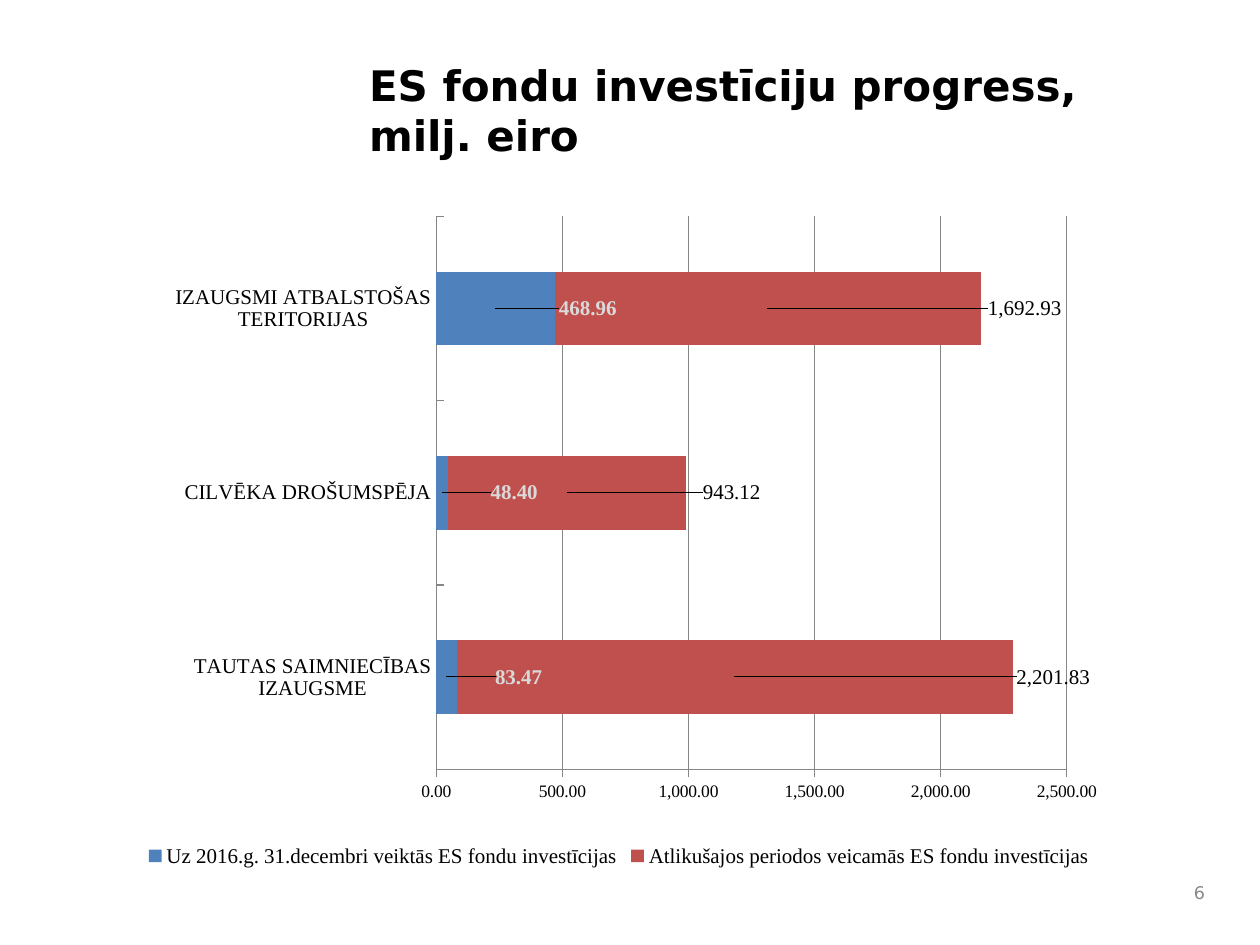
import pptx
import pptx.chart.data
import pptx.dml.color
import pptx.enum.chart
import pptx.enum.text
import pptx.oxml
import pptx.oxml.ns
import pptx.util
from pptx.util import Cm, Pt

RGBColor = pptx.dml.color.RGBColor
BLACK = RGBColor(0x00, 0x00, 0x00)
GREY = RGBColor(0x89, 0x89, 0x89)
AXIS_GREY = RGBColor(0x86, 0x86, 0x86)
LIGHT_GREY = RGBColor(0xD9, 0xD9, 0xD9)
BLUE = RGBColor(0x4F, 0x81, 0xBD)
RED = RGBColor(0xC0, 0x50, 0x4D)

HEADING_FONT = "DejaVu Sans"
CHART_FONT = "Times New Roman"
MILLIONS = "#,##0.00,,"

CATEGORIES = [
    "TAUTAS SAIMNIECĪBAS IZAUGSME",
    "CILVĒKA DROŠUMSPĒJA",
    "IZAUGSMI ATBALSTOŠAS TERITORIJAS",
]
SERIES = [
    {
        "name": "Uz 2016.g. 31.decembri veiktās ES fondu investīcijas",
        "values": [83470000, 48400000, 468960000],
        "fill": BLUE,
        "label_color": LIGHT_GREY,
        "bold": True,
        "label_shifts": [0.07, 0.07, 0.09],
    },
    {
        "name": "Atlikušajos periodos veicamās ES fondu investīcijas",
        "values": [2201830000, 943120000, 1692930000],
        "fill": RED,
        "label_color": BLACK,
        "bold": False,
        "label_shifts": [0.31, 0.16, 0.25],
    },
]


def format_font(font, name, size, color, bold=False):
    font.name = name
    font.size = Pt(size)
    font.color.rgb = color
    font.bold = bold


def add_text(slide, box, text, size, color, bold=False, alignment=None, anchor=None):
    shape = slide.shapes.add_textbox(*box)
    text_frame = shape.text_frame
    text_frame.word_wrap = True
    text_frame.vertical_anchor = anchor
    text_frame.text = text
    paragraph = text_frame.paragraphs[0]
    paragraph.alignment = alignment
    format_font(paragraph.runs[0].font, HEADING_FONT, size, color, bold)


def make_layout(**settings):
    children = "".join(f'<c:{tag} val="{value}"/>' for tag, value in settings.items())
    namespace = pptx.oxml.ns.nsdecls("c")
    return pptx.oxml.parse_xml(
        f"<c:layout {namespace}><c:manualLayout>{children}</c:manualLayout></c:layout>"
    )


def make_number_format():
    namespace = pptx.oxml.ns.nsdecls("c")
    return pptx.oxml.parse_xml(
        f'<c:numFmt {namespace} formatCode="{MILLIONS}" sourceLinked="0"/>'
    )


def format_labels(labels, settings):
    labels.position = pptx.enum.chart.XL_LABEL_POSITION.CENTER
    format_font(labels.font, CHART_FONT, 12, settings["label_color"], settings["bold"])


def format_series(series, settings):
    series.format.fill.solid()
    series.format.fill.fore_color.rgb = settings["fill"]
    labels = series.data_labels
    labels.show_value = True
    labels.number_format = MILLIONS
    labels.number_format_is_linked = False
    format_labels(labels, settings)
    for index in range(len(CATEGORIES)):
        format_labels(series.points[index].data_label, settings)
    for element, shift in zip(series._element.xpath(".//c:dLbl"), settings["label_shifts"]):
        element.insert(1, make_layout(x=shift, y=0))
        element.insert(2, make_number_format())


def format_axes(chart):
    tick_mark = pptx.enum.chart.XL_TICK_MARK
    category_axis, value_axis = chart.category_axis, chart.value_axis
    category_axis.major_tick_mark = tick_mark.INSIDE
    value_axis.major_tick_mark = tick_mark.OUTSIDE
    value_axis.minimum_scale = 0
    value_axis.maximum_scale = 2500000000
    value_axis.major_unit = 500000000
    value_axis.has_major_gridlines = True
    value_axis.tick_labels.number_format = MILLIONS
    value_axis.tick_labels.number_format_is_linked = False
    for axis, size in ((category_axis, 12), (value_axis, 10)):
        format_font(axis.tick_labels.font, CHART_FONT, size, BLACK)
    for part in (category_axis, value_axis, value_axis.major_gridlines):
        part.format.line.color.rgb = AXIS_GREY
        part.format.line.width = Pt(0.75)


def set_plot_position(chart):
    plot_area = chart._chartSpace.chart.plotArea
    for layout in plot_area.xpath("c:layout"):
        plot_area.remove(layout)
    plot_area.insert(0, make_layout(
        layoutTarget="inner", xMode="edge", yMode="edge", x=0.32, y=0.06, w=0.61, h=0.8
    ))
    position = plot_area.xpath("c:layout/c:manualLayout")[0]
    for child, value in zip(position[-4:], (0.322, 0.056, 0.614, 0.796)):
        child.set("val", str(value))


def add_progress_chart(slide, box):
    data = pptx.chart.data.CategoryChartData(number_format=MILLIONS)
    data.categories = CATEGORIES
    for settings in SERIES:
        data.add_series(settings["name"], settings["values"])
    chart_type = pptx.enum.chart.XL_CHART_TYPE.BAR_STACKED
    chart = slide.shapes.add_chart(chart_type, *box, data).chart
    format_font(chart.font, CHART_FONT, 10, BLACK)
    chart.has_title = False
    chart.has_legend = True
    chart.legend.position = pptx.enum.chart.XL_LEGEND_POSITION.BOTTOM
    chart.legend.include_in_layout = False
    format_font(chart.legend.font, CHART_FONT, 12, BLACK)
    plot = chart.plots[0]
    plot.gap_width = 150
    plot.overlap = 100
    plot.vary_by_categories = False
    for series, settings in zip(plot.series, SERIES):
        format_series(series, settings)
    format_axes(chart)
    set_plot_position(chart)


def main():
    presentation = pptx.Presentation()
    presentation.slide_width = Cm(25.4)
    presentation.slide_height = Cm(19.05)
    slide = presentation.slides.add_slide(presentation.slide_layouts[6])
    add_text(slide, (Cm(7.19), Cm(1.07), Cm(16.94), Cm(2.87)),
             "ES fondu investīciju progress, milj. eiro", 24, BLACK, bold=True,
             anchor=pptx.enum.text.MSO_ANCHOR.TOP)
    add_text(slide, (Cm(23.7), Cm(17.58), Cm(0.84), Cm(0.84)), "6", 10, GREY,
             alignment=pptx.enum.text.PP_ALIGN.RIGHT,
             anchor=pptx.enum.text.MSO_ANCHOR.MIDDLE)
    add_progress_chart(slide, (Cm(2.13), Cm(3.58), Cm(20.7), Cm(14)))
    presentation.save("out.pptx")


if __name__ == "__main__":
    main()
